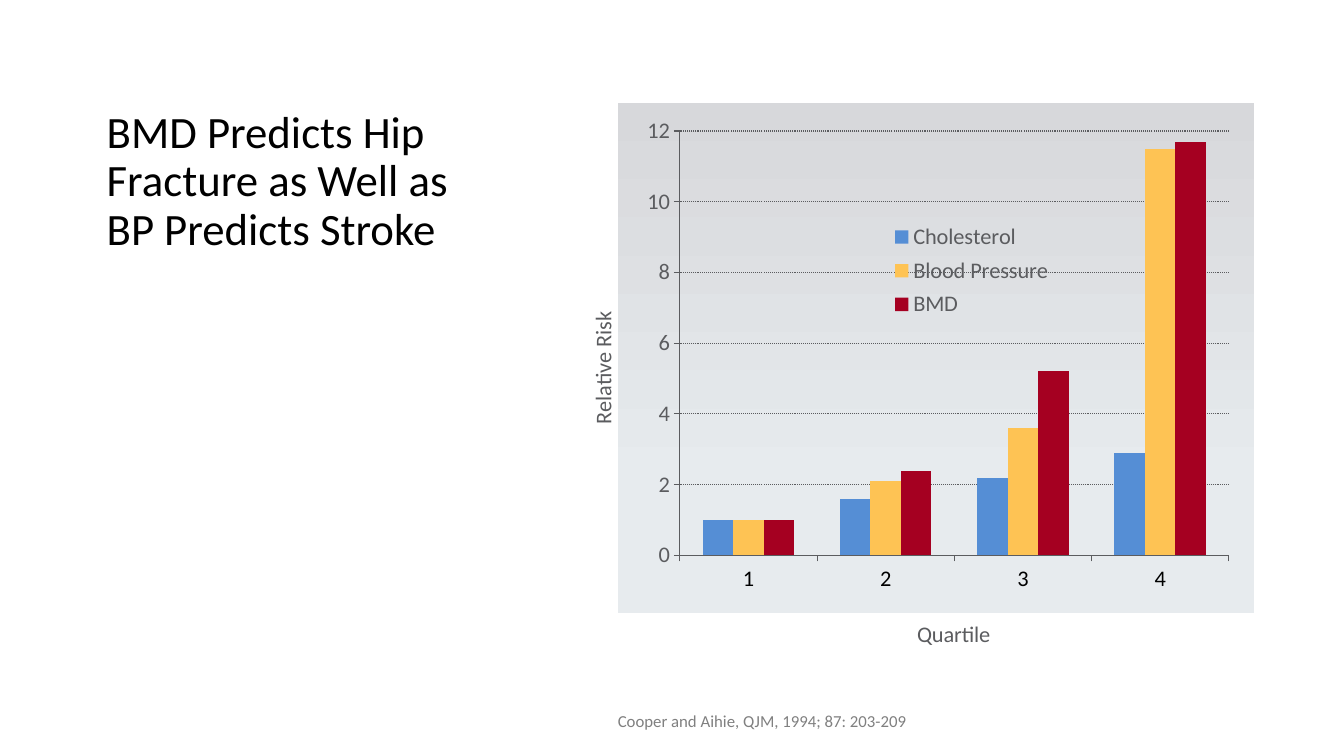
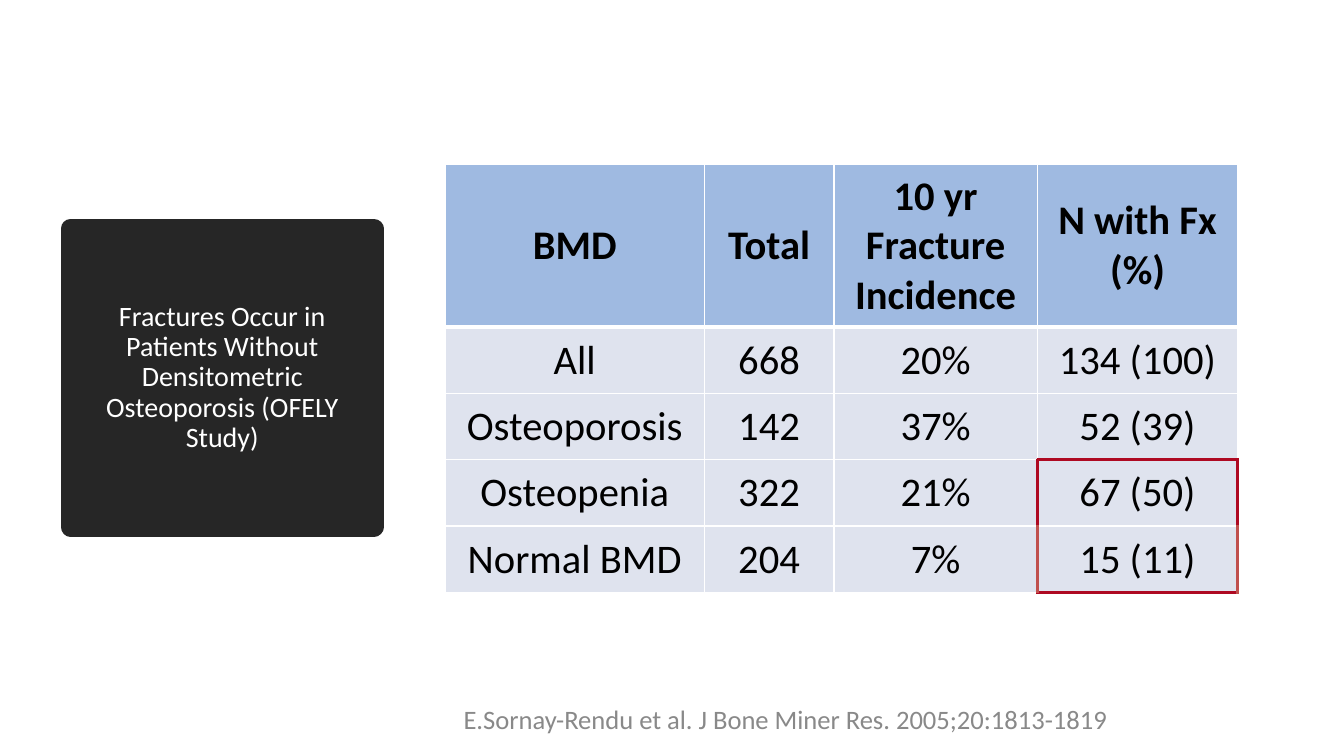
from lxml import etree
from pptx import Presentation
from pptx.chart.data import CategoryChartData
from pptx.dml.color import RGBColor
from pptx.enum.chart import XL_CHART_TYPE, XL_LEGEND_POSITION, XL_TICK_MARK
from pptx.enum.dml import MSO_LINE
from pptx.enum.shapes import MSO_SHAPE
from pptx.enum.text import MSO_ANCHOR, PP_ALIGN
from pptx.oxml.ns import qn
from pptx.util import Pt

LEFT, CENTER = PP_ALIGN.LEFT, PP_ALIGN.CENTER
MIDDLE, BOTTOM = MSO_ANCHOR.MIDDLE, MSO_ANCHOR.BOTTOM
OUTSIDE = XL_TICK_MARK.OUTSIDE
RECT = MSO_SHAPE.RECTANGLE

# Shared style
FONT = "Calibri"
COLORS = {
    "black": "000000", "white": "FFFFFF", "dark": "262626",
    "source1": "808080", "source2": "898989", "axis": "5B5C5F",
    "panel_top": "D7D8DB", "panel_bottom": "E7EBEE",
    "header": "9FBAE1", "body": "DFE3EE",
    "mark": "AE0922", "mark_low": "C0504D",
    "blue": "558ED5", "yellow": "FEC354", "red": "A50021",
}
SOURCE_TOP, SOURCE_H = 500.4, 28.8

# Content
RISK = {
    "title": "BMD Predicts Hip Fracture as Well as\vBP Predicts Stroke",
    "source": "Cooper and Aihie, QJM, 1994; 87: 203-209",
    "x_title": "Quartile",
    "y_title": "Relative Risk",
    "quartiles": ["1", "2", "3", "4"],
    "series": [
        ("Cholesterol", (1, 1.6, 2.2, 2.9), "blue"),
        ("Blood Pressure", (1, 2.1, 3.6, 11.5), "yellow"),
        ("BMD", (1, 2.4, 5.2, 11.7), "red"),
    ],
}
OFELY = {
    "title": "Fractures Occur in Patients Without Densitometric "
             "Osteoporosis (OFELY Study)",
    "source": "E.Sornay-Rendu et al. J Bone Miner Res. 2005;20:1813-1819",
    "rows": [
        ("BMD", "Total", "10 yr Fracture Incidence", "N with Fx (%)"),
        ("All", "668", "20%", "134 (100)"),
        ("Osteoporosis", "142", "37%", "52 (39)"),
        ("Osteopenia", "322", "21%", "67 (50)"),
        ("Normal BMD", "204", "7%", "15 (11)"),
    ],
    "col_widths": (184.8, 92.8, 145.3, 143.1),
    "header_h": 115.9,
    "row_h": 47.4,
}


def rgb(name):
    return RGBColor.from_string(COLORS[name])


def pts(*lengths):
    return [Pt(v) for v in lengths]


def write(tf, text, size, color="black", bold=False, align=LEFT,
          anchor=MIDDLE, spacing=None):
    """Fill a text frame with one formatted paragraph."""
    tf.text = text
    tf.word_wrap = True
    tf.vertical_anchor = anchor
    p = tf.paragraphs[0]
    p.alignment = align
    if spacing:
        p.line_spacing = spacing
    for r in p.runs:
        set_font(r.font, size, color, bold)


def set_font(font, size, color, bold=False):
    font.name, font.size, font.bold = FONT, Pt(size), bold
    font.color.rgb = rgb(color)


def add_text(s, text, box, **fmt):
    write(s.shapes.add_textbox(*pts(*box)).text_frame, text, **fmt)


def add_source(s, text, left, width, **fmt):
    add_text(s, text, (left, SOURCE_TOP, width, SOURCE_H), **fmt)


# Chart helpers
def place(parent, index, x, y, w=None, h=None, inner=False):
    """Give a chart part a fixed place, as fractions of the chart."""
    for old in parent.findall(qn("c:layout")):
        parent.remove(old)
    layout = etree.Element(qn("c:layout"))
    manual = etree.SubElement(layout, qn("c:manualLayout"))
    values = [("xMode", "edge"), ("yMode", "edge"),
              ("x", x), ("y", y), ("w", w), ("h", h)]
    if inner:
        values.insert(0, ("layoutTarget", "inner"))
    for tag, value in values:
        if value is not None:
            etree.SubElement(manual, qn("c:" + tag)).set("val", str(value))
    parent.insert(index, layout)


def no_fill():
    sp_pr = etree.Element(qn("c:spPr"))
    etree.SubElement(sp_pr, qn("a:noFill"))
    line = etree.SubElement(sp_pr, qn("a:ln"))
    etree.SubElement(line, qn("a:noFill"))
    return sp_pr


def style_axis(axis, title, x, y, rotation, label_color):
    axis.major_tick_mark = OUTSIDE
    axis.format.line.color.rgb = rgb("axis")
    axis.format.line.width = Pt(0.75)
    set_font(axis.tick_labels.font, 16, label_color)
    tf = axis.axis_title.text_frame
    tf.text = title
    set_font(tf.paragraphs[0].runs[0].font, 16, "axis")
    tf._txBody.bodyPr.set("rot", str(rotation * 60000))
    place(axis.axis_title._element, 1, x, y)


def add_risk_chart(s, box):
    data = CategoryChartData()
    data.categories = RISK["quartiles"]
    for name, values, _ in RISK["series"]:
        data.add_series(name, values)
    chart = s.shapes.add_chart(
        XL_CHART_TYPE.COLUMN_CLUSTERED, *pts(*box), data).chart
    set_font(chart.font, 16, "axis")
    chart.has_title = False

    plot = chart.plots[0]
    plot.gap_width, plot.overlap, plot.vary_by_categories = 150, 0, False
    for series, (_, _, color) in zip(plot.series, RISK["series"]):
        series.format.fill.solid()
        series.format.fill.fore_color.rgb = rgb(color)

    style_axis(chart.category_axis, RISK["x_title"], 0.53, 0.93, 0, "black")
    axis = chart.value_axis
    style_axis(axis, RISK["y_title"], 0.05, 0.36, -90, "axis")
    axis.minimum_scale, axis.maximum_scale, axis.major_unit = 0, 12, 2
    grid = axis.major_gridlines.format.line
    grid.color.rgb, grid.width = rgb("axis"), Pt(0.75)
    grid.dash_style = MSO_LINE.ROUND_DOT

    chart.has_legend = True
    legend = chart.legend
    legend.position = XL_LEGEND_POSITION.RIGHT
    legend.include_in_layout = False
    set_font(legend.font, 16, "axis")
    place(legend._element, 1, 0.49, 0.19, 0.25, 0.2)

    # Let the panel behind show through
    space = chart._chartSpace
    area = space.find(".//" + qn("c:plotArea"))
    place(area, 0, 0.19, 0.03, 0.8, 0.79, inner=True)
    area.append(no_fill())
    space.find(qn("c:chart")).addnext(no_fill())


# Table helpers
def cell_borders(row, col, last_row, last_col):
    """Colour and width of each side; the last two results are boxed."""
    edges = {side: ("white", 1) for side in "LRTB"}
    if row == 0:
        edges["B"] = ("white", 3)
    if row == 1:
        edges["T"] = ("white", 3)
    side_color = {last_row - 1: "mark", last_row: "mark_low"}.get(row)
    if side_color and col == last_col - 1:
        edges["R"] = (side_color, 2.25)
    if col == last_col:
        if side_color:
            edges["L"] = edges["R"] = (side_color, 2.25)
        if row == last_row - 1:
            edges["T"] = ("mark", 2.25)
        if row in (last_row - 2, last_row):
            edges["B"] = ("mark", 2.25)
    return edges


def draw_borders(cell, edges):
    tc_pr = cell._tc.get_or_add_tcPr()
    for side, (color, width) in edges.items():
        line = etree.SubElement(tc_pr, qn("a:ln" + side))
        line.set("w", str(Pt(width)))
        fill = etree.SubElement(line, qn("a:solidFill"))
        etree.SubElement(fill, qn("a:srgbClr")).set("val", COLORS[color])


def add_fracture_table(s, left, top):
    rows, widths = OFELY["rows"], OFELY["col_widths"]
    heights = [OFELY["header_h"]] + [OFELY["row_h"]] * (len(rows) - 1)
    table = s.shapes.add_table(
        len(rows), len(widths),
        *pts(left, top, sum(widths), sum(heights))).table
    table.horz_banding = False
    for column, width in zip(table.columns, widths):
        column.width = Pt(width)
    for i, (texts, height) in enumerate(zip(rows, heights)):
        table.rows[i].height = Pt(height)
        for j, text in enumerate(texts):
            cell = table.cell(i, j)
            write(cell.text_frame, text, 29, bold=i == 0, align=CENTER)
            cell.vertical_anchor = MIDDLE
            cell.margin_left = cell.margin_right = Pt(9.4)
            cell.margin_top = cell.margin_bottom = Pt(4.3)
            draw_borders(
                cell, cell_borders(i, j, len(rows) - 1, len(widths) - 1))
            cell.fill.solid()
            cell.fill.fore_color.rgb = rgb("body" if i else "header")


# Slides
def risk_slide(s):
    add_text(s, RISK["title"], (69.1, 58.3, 272.2, 127.4), size=32,
             anchor=BOTTOM, spacing=0.9)
    add_source(s, RISK["source"], 434.2, 244, size=12, color="source1")
    panel = s.shapes.add_shape(RECT, *pts(441.2, 73.4, 454.5, 364.3))
    panel.shadow.inherit = False
    panel.line.fill.background()
    panel.fill.gradient()
    panel.fill.gradient_angle = 270
    stops = [(0, "panel_top"), (0.75, "panel_bottom")]
    for stop, (position, color) in zip(panel.fill.gradient_stops, stops):
        stop.position, stop.color.rgb = position, rgb(color)
    add_risk_chart(s, (392.4, 82.1, 490.3, 385.9))


def ofely_slide(s):
    sp = s.shapes.add_shape(RECT, *pts(50.4, 163.4, 216.7, 213.1))
    sp.shadow.inherit = False
    sp.fill.solid()
    sp.fill.fore_color.rgb = sp.line.color.rgb = rgb("dark")
    sp.line.width = Pt(13.75)
    etree.SubElement(sp.line._get_or_add_ln(), qn("a:round"))
    write(sp.text_frame, OFELY["title"], 20, color="white", align=CENTER,
          spacing=0.9)
    add_source(s, OFELY["source"], 324, 553.7, size=19, color="source2",
               spacing=0.9)
    add_fracture_table(s, 318.2, 117.7)


def main():
    prs = Presentation()
    prs.slide_width, prs.slide_height = Pt(960), Pt(540)
    for build in (risk_slide, ofely_slide):
        build(prs.slides.add_slide(prs.slide_layouts[6]))
    prs.save("out.pptx")


if __name__ == "__main__":
    main()
